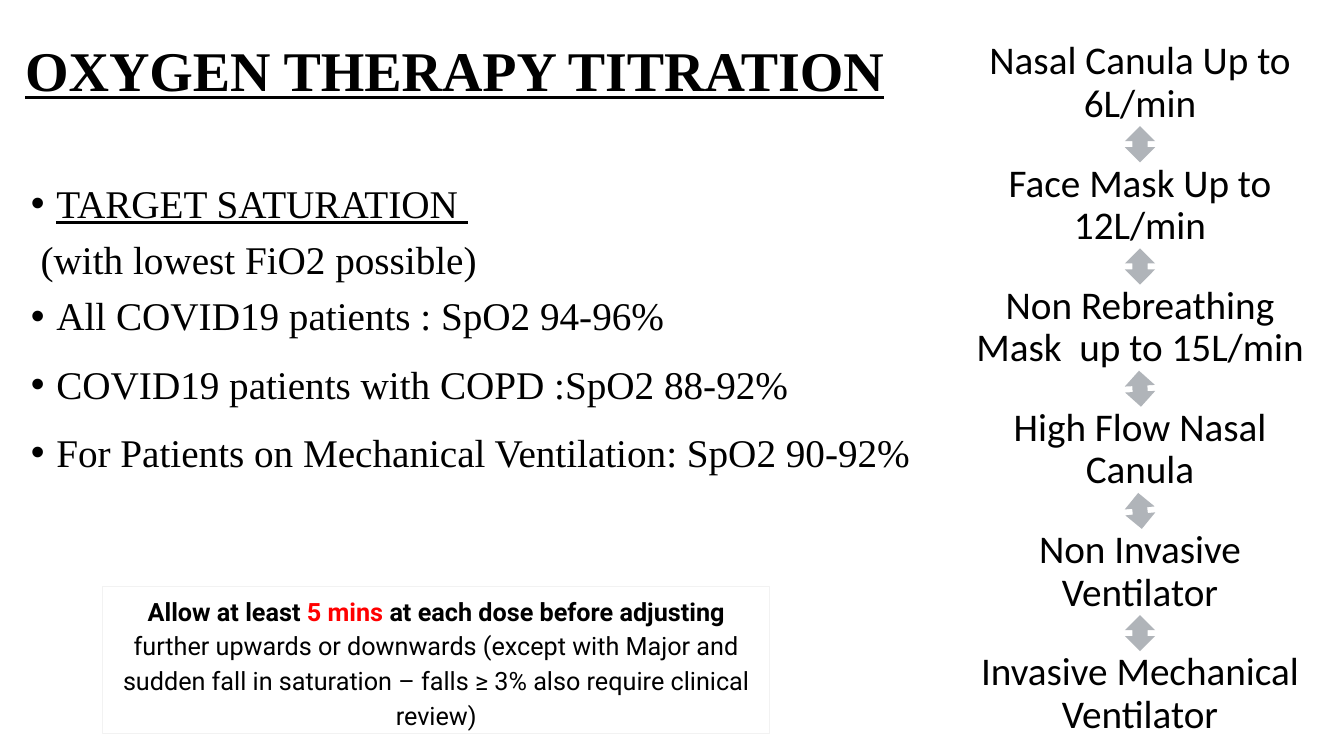
from pptx import Presentation
from pptx import util as u
from pptx.dml.color import RGBColor
from pptx.enum import shapes, text
from pptx.oxml import parse_xml
from pptx.oxml.ns import nsdecls

SERIF = "Times New Roman"
STEPS = [
    "Nasal Canula Up to 6L/min",
    "Face Mask Up to 12L/min",
    "Non Rebreathing Mask  up to 15L/min",
    "High Flow Nasal Canula",
    "Non Invasive Ventilator",
    "Invasive Mechanical Ventilator",
]
ARROW_TILTS = [0, 0, -3.2, -5.8, 0]
STEP_TOP, STEP_PITCH = 1.07, 3.08
TARGETS = [  # wording, bulleted, underlined, line spacing
    ("TARGET SATURATION ", True, True, 0.9),
    (" (with lowest FiO2 possible)", False, False, 0.9),
    ("All COVID19 patients : SpO2 94-96%", True, False, 0.9),
    ("COVID19 patients with COPD :SpO2 88-92%", True, False, 1.15),
    ("For Patients on Mechanical Ventilation: SpO2 90-92%", True, False, 1.15),
]


def color(value):
    return RGBColor.from_string(value)


def place(box, left, top, width, height):
    box.left, box.top = u.Cm(left), u.Cm(top)
    box.width, box.height = u.Cm(width), u.Cm(height)


def add_span(para, wording, font, size, fill="000000", bold=False, underline=False):
    span = para.add_run()
    span.text = wording
    span.font.name = font
    span.font.size = u.Pt(size)
    span.font.bold = bold
    span.font.underline = underline
    span.font.color.rgb = color(fill)


def add_bullet(para):
    """Give the paragraph a round bullet with a hanging indent."""
    properties = para._p.get_or_add_pPr()
    properties.set("marL", str(u.Cm(0.64)))
    properties.set("indent", str(-u.Cm(0.64)))
    properties.append(parse_xml(f'<a:buFont {nsdecls("a")} typeface="Arial"/>'))
    properties.append(parse_xml(f'<a:buChar {nsdecls("a")} char="•"/>'))


def add_block(page, kind, left, top, width, height, fill, line=None):
    block = page.shapes.add_shape(
        kind, u.Cm(left), u.Cm(top), u.Cm(width), u.Cm(height))
    block.shadow.inherit = False
    block.fill.solid()
    block.fill.fore_color.rgb = color(fill)
    if line:
        block.line.color.rgb = color(line)
        block.line.width = u.Pt(1)
    else:
        block.line.fill.background()
    return block


def set_title(page):
    title = page.shapes.title
    place(title, 0.38, 0, 29.21, 3.68)
    title.text_frame.vertical_anchor = text.MSO_ANCHOR.MIDDLE
    para = title.text_frame.paragraphs[0]
    para.alignment = text.PP_ALIGN.LEFT
    para.line_spacing = 0.9
    add_span(para, "OXYGEN THERAPY TITRATION", SERIF, 40, bold=True, underline=True)


def add_targets(page):
    box = page.shapes.add_textbox(u.Cm(0.53), u.Cm(4.52), u.Cm(29.21), u.Cm(12.09))
    frame = box.text_frame
    frame.word_wrap = True
    for index, (wording, bulleted, underlined, spacing) in enumerate(TARGETS):
        para = frame.add_paragraph() if index else frame.paragraphs[0]
        para.line_spacing = spacing
        para.space_before = u.Pt(10)
        if bulleted:
            add_bullet(para)
        add_span(para, wording, SERIF, 28, underline=underlined)


def add_step(page, wording, top):
    step = add_block(page, shapes.MSO_SHAPE.ROUNDED_RECTANGLE,
                     24.08, top, 9.3, 2.06, "FFFFFF")
    step.adjustments[0] = 0.1
    frame = step.text_frame
    frame.word_wrap = True
    frame.vertical_anchor = text.MSO_ANCHOR.MIDDLE
    frame.margin_left = frame.margin_right = u.Cm(0.3)
    frame.margin_top = frame.margin_bottom = u.Cm(0.3)
    para = frame.paragraphs[0]
    para.alignment = text.PP_ALIGN.CENTER
    para.line_spacing = 0.9
    add_span(para, wording, "Calibri", 28)


def add_ladder(page):
    """Stack the oxygen delivery steps with a two-way arrow after each but the last."""
    for index, wording in enumerate(STEPS):
        add_step(page, wording, STEP_TOP + index * STEP_PITCH)
    for index, tilt in enumerate(ARROW_TILTS):
        arrow = add_block(page, shapes.MSO_SHAPE.UP_DOWN_ARROW, 28.35,
                          STEP_TOP + 2.11 + index * STEP_PITCH, 0.76, 0.91, "B0B4B9")
        arrow.rotation = tilt


def add_advice(page):
    advice = add_block(page, shapes.MSO_SHAPE.RECTANGLE,
                       2.59, 14.78, 16.81, 3.71, "FFFFFF", "F2F2F2")
    frame = advice.text_frame
    frame.word_wrap = True
    frame.auto_size = text.MSO_AUTO_SIZE.SHAPE_TO_FIT_TEXT
    frame.vertical_anchor = text.MSO_ANCHOR.TOP
    para = frame.paragraphs[0]
    para.alignment = text.PP_ALIGN.CENTER
    para.line_spacing = 1.15
    para.space_after = u.Pt(10)
    add_span(para, "Allow at least ", "Roboto", 18, bold=True)
    add_span(para, "5 mins", "Roboto", 18, fill="FF0000", bold=True)
    add_span(para, " at each dose before adjusting", "Roboto", 18, bold=True)
    add_span(para, " further upwards or downwards (except with Major and sudden fall "
             "in saturation – falls ≥ 3% also require clinical review)", "Roboto", 18)


def main():
    deck = Presentation()
    deck.slide_width, deck.slide_height = u.Cm(33.87), u.Cm(19.05)
    page = deck.slides.add_slide(deck.slide_layouts.get_by_name("Title Only"))
    set_title(page)
    add_targets(page)
    add_ladder(page)
    add_advice(page)
    deck.save("out.pptx")


if __name__ == "__main__":
    main()
